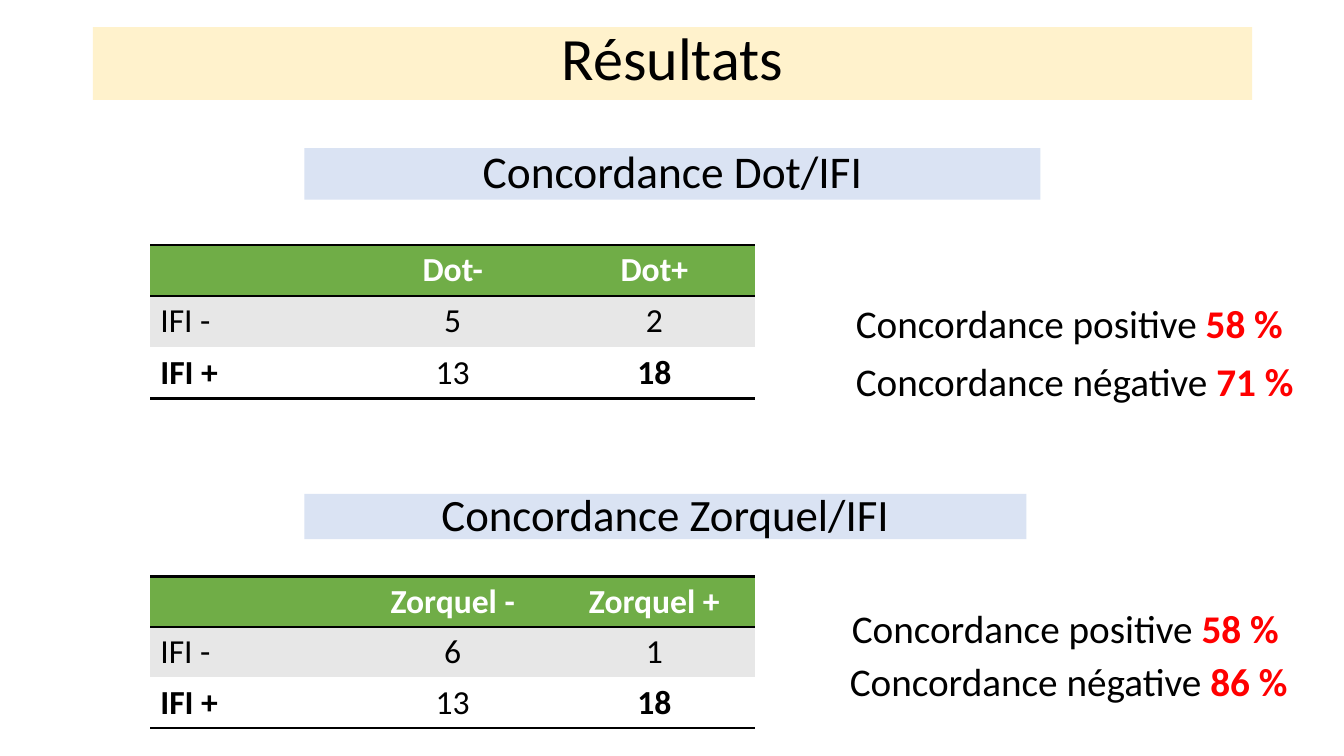
import pptx
import pptx.util
import pptx.dml.color
import pptx.enum.shapes
import pptx.enum.text
import pptx.oxml
import pptx.oxml.ns
from dataclasses import dataclass

Inches = pptx.util.Inches
ALIGN = pptx.enum.text.PP_ALIGN


@dataclass(frozen=True)
class Theme:
    font: str = "Calibri"
    text: str = "000000"
    inverse: str = "FFFFFF"
    accent: str = "FF0000"
    title_fill: str = "FFF2CC"
    section_fill: str = "DAE3F3"
    header_fill: str = "70AD47"
    band_fill: str = "E7E7E7"
    plain_fill: str = "FFFFFF"
    title_size: float = 42.9
    rate_size: float = 28
    cell_size: float = 24


theme = Theme()


def add_text(paragraph, text, size, color=theme.text, bold=False, align=ALIGN.LEFT, spacing=None):
    paragraph.alignment = align
    if spacing:
        paragraph.line_spacing = spacing
    run = paragraph.add_run()
    run.text = text
    run.font.name = theme.font
    run.font.size = pptx.util.Pt(size)
    run.font.bold = bold
    run.font.color.rgb = pptx.dml.color.RGBColor.from_string(color)


def set_rule(cell, side):
    rule = pptx.oxml.parse_xml(
        f'<a:{side} {pptx.oxml.ns.nsdecls("a")} w="{pptx.util.Pt(2)}"><a:solidFill>'
        f'<a:srgbClr val="{theme.text}"/></a:solidFill></a:{side}>')
    # Rules come before the fill in the cell properties, left to bottom
    properties = cell._tc.get_or_add_tcPr()
    position = len(properties.findall(pptx.oxml.ns.qn("a:lnT")))
    properties.insert(position, rule)


presentation = pptx.Presentation()
presentation.slide_width = Inches(13.33)
presentation.slide_height = Inches(7.5)
slide = presentation.slides.add_slide(presentation.slide_layouts[5])

# Slide title
title = slide.shapes.title
title.left, title.top, title.width, title.height = map(Inches, (0.92, 0.27, 11.5, 0.72))
title.fill.solid()
title.fill.fore_color.rgb = pptx.dml.color.RGBColor.from_string(theme.title_fill)
title.text_frame.auto_size = pptx.enum.text.MSO_AUTO_SIZE.NONE
title.text_frame.vertical_anchor = pptx.enum.text.MSO_ANCHOR.MIDDLE
add_text(title.text_frame.paragraphs[0], "Résultats", theme.title_size,
         align=ALIGN.CENTER, spacing=0.8)

# One section per test: heading, its box and size, counts, concordance rates
sections = [
    dict(heading="Concordance Dot/IFI", box=(3.02, 1.47, 7.3, 0.51), size=32.4,
         table_top=2.43, header=("", "Dot-", "Dot+"), negative=("IFI -", "5", "2"),
         rates=[("positive", "58 %", 8.39, 2.92, 4.49), ("négative", "71 %", 8.39, 3.5, 4.59)]),
    dict(heading="Concordance Zorquel/IFI", box=(3.02, 4.9, 7.16, 0.45), size=32,
         table_top=5.72, header=("", "Zorquel -", "Zorquel +"), negative=("IFI -", "6", "1"),
         rates=[("positive", "58 %", 8.35, 5.95, 4.49), ("négative", "86 %", 8.33, 6.47, 4.59)]),
]
positive = ("IFI +", "13", "18")
row_fills = (theme.header_fill, theme.band_fill, theme.plain_fill)

for section in sections:
    # Section heading
    heading = slide.shapes.add_shape(pptx.enum.shapes.MSO_SHAPE.RECTANGLE,
                                     *map(Inches, section["box"]))
    heading.shadow.inherit = False
    heading.fill.solid()
    heading.fill.fore_color.rgb = pptx.dml.color.RGBColor.from_string(theme.section_fill)
    heading.line.fill.background()
    heading.text_frame.margin_top = heading.text_frame.margin_bottom = 0
    heading.text_frame.vertical_anchor = pptx.enum.text.MSO_ANCHOR.MIDDLE
    add_text(heading.text_frame.paragraphs[0], section["heading"], section["size"],
             align=ALIGN.CENTER, spacing=0.9)

    # Counts, in a table style without grid
    counts_frame = slide.shapes.add_table(3, 3, Inches(1.49), Inches(section["table_top"]),
                                          Inches(6), Inches(1.5))
    counts = counts_frame.table
    style = counts._tbl.tblPr.find(pptx.oxml.ns.qn("a:tableStyleId"))
    style.text = "{2D5ABB26-0587-4C30-8999-92F81FD0307C}"
    for row, values in enumerate((section["header"], section["negative"], positive)):
        for column, value in enumerate(values):
            cell = counts.cell(row, column)
            cell.fill.solid()
            cell.fill.fore_color.rgb = pptx.dml.color.RGBColor.from_string(row_fills[row])
            if row == 0:
                set_rule(cell, "lnT")
            if row != 1:
                set_rule(cell, "lnB")
            if value:
                add_text(cell.text_frame.paragraphs[0], value, theme.cell_size,
                         color=theme.inverse if row == 0 else theme.text,
                         bold=row == 0 or (row == 2 and column != 1),
                         align=ALIGN.CENTER if column else ALIGN.LEFT)

    # Concordance rates
    for kind, rate, left, top, width in section["rates"]:
        concordance = slide.shapes.add_textbox(Inches(left), Inches(top),
                                               Inches(width), Inches(0.57))
        concordance.text_frame.word_wrap = False
        concordance.text_frame.auto_size = pptx.enum.text.MSO_AUTO_SIZE.SHAPE_TO_FIT_TEXT
        line = concordance.text_frame.paragraphs[0]
        add_text(line, f"Concordance {kind} ", theme.rate_size)
        add_text(line, rate, theme.rate_size, color=theme.accent, bold=True)

presentation.save("out.pptx")
